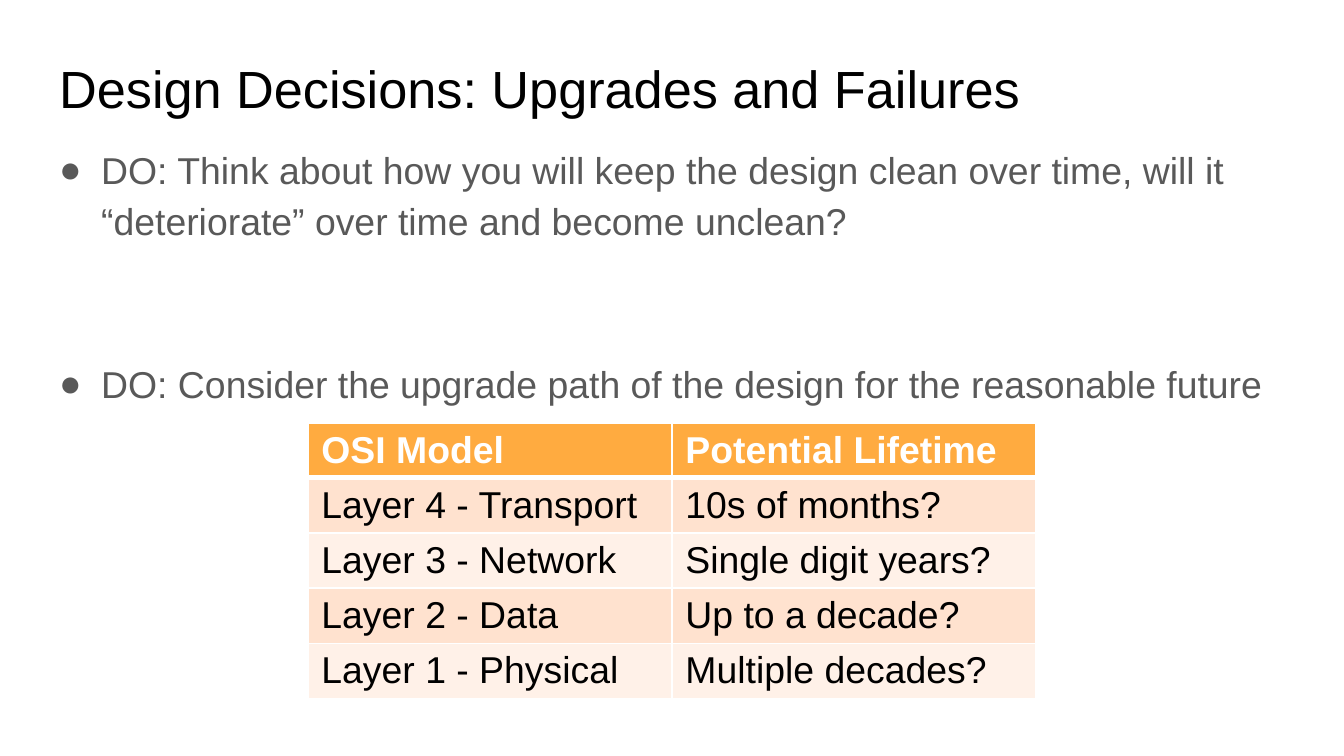
from dataclasses import dataclass
from typing import NamedTuple

from lxml import etree
from pptx import Presentation
from pptx.dml.color import RGBColor
from pptx.enum.text import MSO_ANCHOR, MSO_AUTO_SIZE, PP_ALIGN
from pptx.oxml.ns import qn
from pptx.util import Length, Pt

TOP = MSO_ANCHOR.TOP
NO_AUTOFIT = MSO_AUTO_SIZE.NONE
LEFT = PP_ALIGN.LEFT


@dataclass(frozen=True)
class Theme:
    font: str = "Arial"
    title_size: Length = Pt(28)
    text_size: Length = Pt(20)
    black: str = "000000"
    white: str = "FFFFFF"
    grey: str = "595959"
    header_fill: str = "FFAB40"
    band_fills: tuple[str, str] = ("FFE2CF", "FFF1E8")
    thin_line: Length = Pt(1)
    thick_line: Length = Pt(3)


class Box(NamedTuple):
    left: Length
    top: Length
    width: Length
    height: Length


class Bullet(NamedTuple):
    text: str
    space_after: Length


class LayerLifetime(NamedTuple):
    layer: str
    lifetime: str


THEME = Theme()
TITLE = "Design Decisions: Upgrades and Failures"
TITLE_BOX = Box(Pt(24.5), Pt(23), Pt(671), Pt(45))
BODY_BOX = Box(Pt(24.5), Pt(68), Pt(671), Pt(292))
TABLE_BOX = Box(Pt(165), Pt(226.5), Pt(390), Pt(147.5))
INSET = Pt(7.2)
BULLET_INDENT = Pt(22.5)

BULLETS = [
    Bullet("DO: Think about how you will keep the design clean over time, "
           "will it “deteriorate” over time and become unclean?", Pt(59.5)),
    Bullet("DO: Consider the upgrade path of the design for the reasonable future", Pt(16)),
]
LIFETIMES = [
    LayerLifetime("OSI Model", "Potential Lifetime"),
    LayerLifetime("Layer 4 - Transport", "10s of months?"),
    LayerLifetime("Layer 3 - Network", "Single digit years?"),
    LayerLifetime("Layer 2 - Data", "Up to a decade?"),
    LayerLifetime("Layer 1 - Physical", "Multiple decades?"),
]


def add_run(paragraph, text: str, size: Length, color: str, bold: bool = False) -> None:
    run = paragraph.add_run()
    run.text = text
    run.font.name = THEME.font
    run.font.size = size
    run.font.bold = bold
    run.font.color.rgb = RGBColor.from_string(color)


def place(placeholder, box: Box):
    """Move a placeholder, reset its text frame and return that frame."""
    placeholder.left, placeholder.top, placeholder.width, placeholder.height = box
    frame = placeholder.text_frame
    frame.margin_left = frame.margin_top = frame.margin_right = frame.margin_bottom = INSET
    frame.vertical_anchor = TOP
    frame.auto_size = NO_AUTOFIT
    frame.word_wrap = True
    return frame


def set_bullet(paragraph) -> None:
    properties = paragraph._p.get_or_add_pPr()
    properties.set("marL", str(BULLET_INDENT))
    properties.set("indent", str(-BULLET_INDENT))
    color = etree.SubElement(properties, qn("a:buClr"))
    etree.SubElement(color, qn("a:srgbClr"), val=THEME.grey)
    etree.SubElement(properties, qn("a:buFont"), typeface=THEME.font)
    etree.SubElement(properties, qn("a:buChar"), char="●")


def add_bullets(frame, bullets: list[Bullet]) -> None:
    for index, bullet in enumerate(bullets):
        paragraph = frame.add_paragraph() if index else frame.paragraphs[0]
        paragraph.alignment = LEFT
        paragraph.line_spacing = 1.15
        paragraph.space_before = Pt(0)
        paragraph.space_after = bullet.space_after
        set_bullet(paragraph)
        add_run(paragraph, bullet.text, THEME.text_size, THEME.grey)


def set_borders(cell, top: Length, bottom: Length) -> None:
    properties = cell._tc.get_or_add_tcPr()
    sides = {"L": THEME.thin_line, "R": THEME.thin_line, "T": top, "B": bottom}
    for position, (side, width) in enumerate(sides.items()):
        line = etree.Element(qn(f"a:ln{side}"), w=str(width))
        fill = etree.SubElement(line, qn("a:solidFill"))
        etree.SubElement(fill, qn("a:srgbClr"), val=THEME.white)
        properties.insert(position, line)


def add_lifetime_table(slide, box: Box, rows: list[LayerLifetime]) -> None:
    table = slide.shapes.add_table(len(rows), len(LayerLifetime._fields), *box).table
    for row_index, row in enumerate(rows):
        is_header = row_index == 0
        fill = THEME.header_fill if is_header else THEME.band_fills[(row_index - 1) % 2]
        color = THEME.white if is_header else THEME.black
        top = THEME.thick_line if row_index == 1 else THEME.thin_line
        bottom = THEME.thick_line if is_header else THEME.thin_line
        for column_index, text in enumerate(row):
            cell = table.cell(row_index, column_index)
            cell.fill.solid()
            cell.fill.fore_color.rgb = RGBColor.from_string(fill)
            set_borders(cell, top, bottom)
            add_run(cell.text_frame.paragraphs[0], text, THEME.text_size, color, is_header)


def main() -> None:
    presentation = Presentation()
    presentation.slide_width, presentation.slide_height = Pt(720), Pt(405)
    slide = presentation.slides.add_slide(presentation.slide_layouts[1])

    heading = place(slide.shapes.title, TITLE_BOX).paragraphs[0]
    heading.alignment = LEFT
    add_run(heading, TITLE, THEME.title_size, THEME.black)

    add_bullets(place(slide.placeholders[1], BODY_BOX), BULLETS)
    add_lifetime_table(slide, TABLE_BOX, LIFETIMES)
    presentation.save("out.pptx")


if __name__ == "__main__":
    main()
